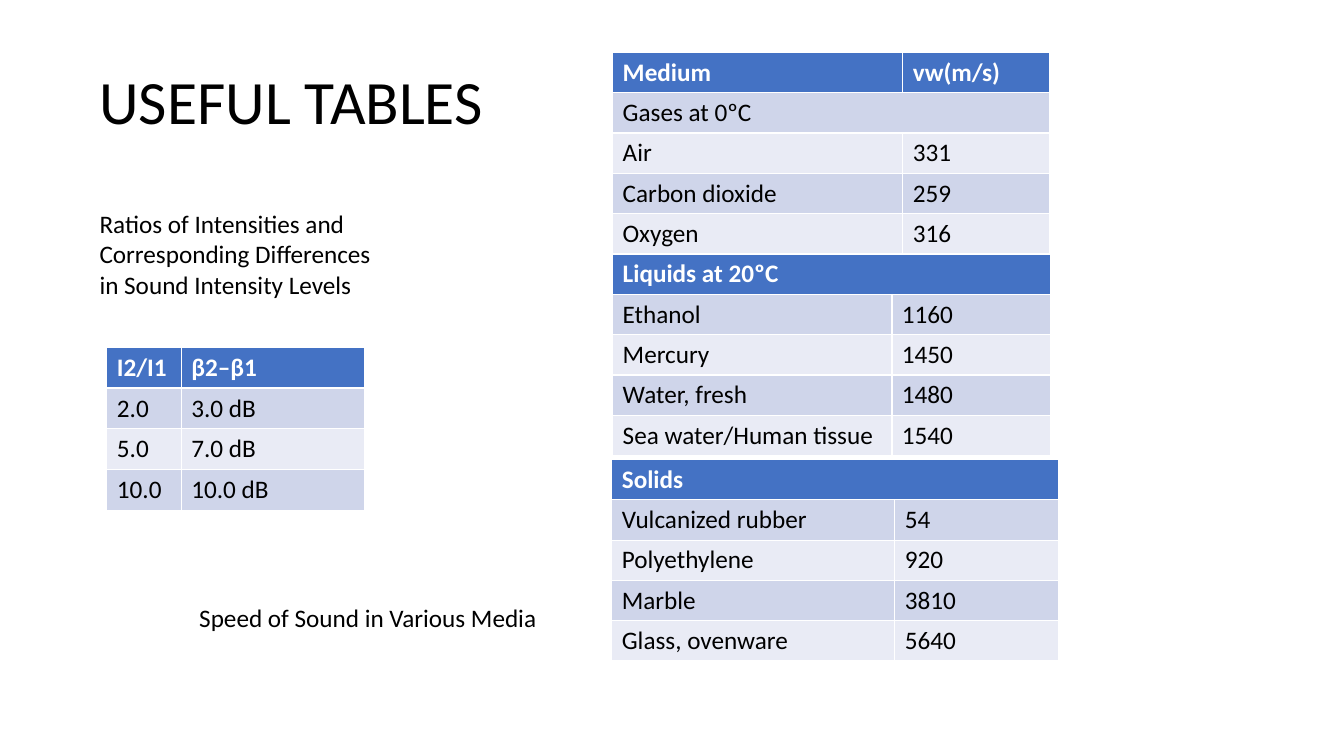
from pptx import Presentation, util as u
from pptx.dml import color
from pptx.enum import text

COLORS = {
    "text": "000000",
    "header": "4472C4",
    "header_text": "FFFFFF",
    "odd": "CFD5EA",
    "even": "E9EBF5",
}


class TableSlide:
    font = "Calibri"
    size = 18

    def __init__(self, presentation):
        self.slide = presentation.slides.add_slide(presentation.slide_layouts[6])

    def style(self, paragraph, size=size, color_name="text", bold=False):
        font = paragraph.font
        font.name = self.font
        font.size = u.Pt(size)
        font.bold = bold
        font.color.rgb = color.RGBColor.from_string(COLORS[color_name])

    def text(self, words, left, top, width, height, size=size,
             anchor=text.MSO_ANCHOR.TOP, spacing=1.0):
        shape = self.slide.shapes.add_textbox(*map(u.Pt, (left, top, width, height)))
        frame = shape.text_frame
        frame.word_wrap = True
        frame.vertical_anchor = anchor
        paragraph = frame.paragraphs[0]
        paragraph.text = words
        paragraph.line_spacing = spacing
        self.style(paragraph, size)

    def table(self, rows, left, top, widths, row_height=28.8):
        shape = self.slide.shapes.add_table(
            len(rows), len(widths), u.Pt(left), u.Pt(top),
            u.Pt(sum(widths)), u.Pt(row_height * len(rows)))
        table = shape.table
        for column, width in zip(table.columns, widths):
            column.width = u.Pt(width)
        for index, values in enumerate(rows):
            table.rows[index].height = u.Pt(row_height)
            for column, cell in enumerate(table.rows[index].cells):
                self.cell(cell, values[column] if column < len(values) else "", index)
            if len(values) == 1:
                table.cell(index, 0).merge(table.cell(index, len(widths) - 1))

    def cell(self, cell, words, row):
        header = row == 0
        fill = "header" if header else "odd" if row % 2 else "even"
        cell.fill.solid()
        cell.fill.fore_color.rgb = color.RGBColor.from_string(COLORS[fill])
        cell.vertical_anchor = text.MSO_ANCHOR.MIDDLE
        cell.margin_top = cell.margin_bottom = u.Pt(3.4)
        paragraph = cell.text_frame.paragraphs[0]
        paragraph.text = words
        self.style(paragraph, color_name="header_text" if header else "text", bold=header)


def main():
    presentation = Presentation()
    presentation.slide_width = u.Pt(960)
    presentation.slide_height = u.Pt(540)
    slide = TableSlide(presentation)

    slide.text("USEFUL TABLES", 64, 36, 344, 77, size=44,
               anchor=text.MSO_ANCHOR.MIDDLE, spacing=0.9)
    slide.text("Ratios of Intensities and Corresponding Differences "
               "in Sound Intensity Levels", 64, 145.4, 217, 72.7)
    slide.text("Speed of Sound in Various Media", 135.2, 427, 273, 29)

    slide.table([("I2/I1", "β2–β1"), ("2.0", "3.0 dB"), ("5.0", "7.0 dB"),
                 ("10.0", "10.0 dB")], 76.3, 247.9, (53.2, 131), row_height=29.2)
    slide.table([("Medium", "vw(m/s)"), ("Gases at 0ºC",), ("Air", "331"),
                 ("Carbon dioxide", "259"), ("Oxygen", "316")],
                437.6, 37.4, (207.2, 105.2))
    slide.table([("Liquids at 20ºC",), ("Ethanol", "1160"), ("Mercury", "1450"),
                 ("Water, fresh", "1480"), ("Sea water/Human tissue", "1540")],
                437.6, 181.5, (199.5, 113.7))
    slide.table([("Solids",), ("Vulcanized rubber", "54"), ("Polyethylene", "920"),
                 ("Marble", "3810"), ("Glass, ovenware", "5640")],
                437, 328.2, (202.2, 116.8))

    presentation.save("out.pptx")


if __name__ == "__main__":
    main()
